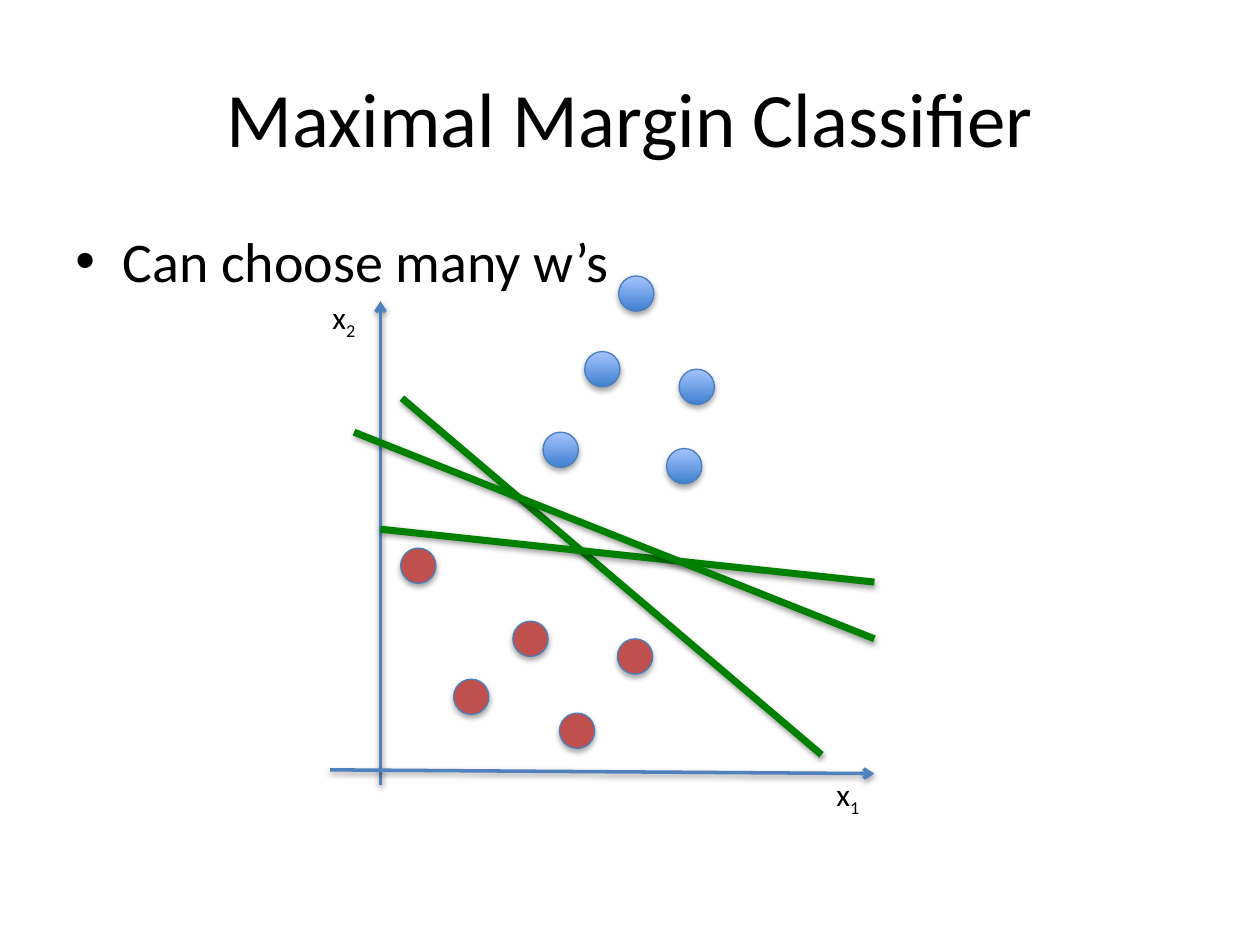
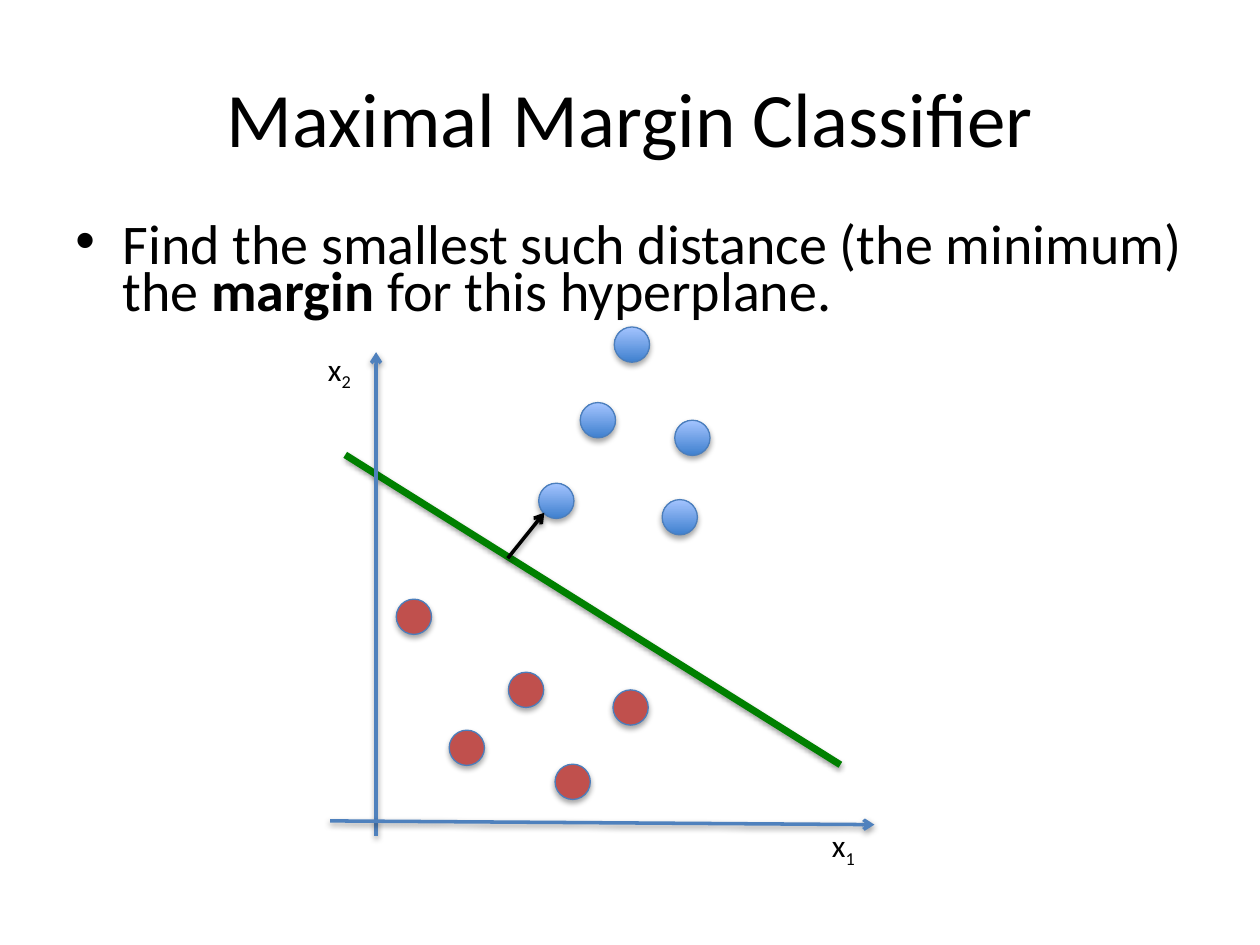
from lxml import etree
from pptx import Presentation
from pptx.dml.color import RGBColor
from pptx.enum.shapes import MSO_CONNECTOR, MSO_SHAPE
from pptx.enum.text import MSO_ANCHOR, MSO_AUTO_SIZE, PP_ALIGN
from pptx.oxml.ns import qn
from pptx.util import Inches, Pt

STRAIGHT = MSO_CONNECTOR.STRAIGHT
OVAL = MSO_SHAPE.OVAL
MIDDLE = MSO_ANCHOR.MIDDLE
TOP = MSO_ANCHOR.TOP
GROW = MSO_AUTO_SIZE.SHAPE_TO_FIT_TEXT
CENTER = PP_ALIGN.CENTER
LEFT = PP_ALIGN.LEFT

COLUMNS, ROWS = 100, 75
FONT = "Calibri"
TITLE = "Maximal Margin Classifier"
COLORS = {
    "text": "000000",
    "axis": "4F81BD",
    "boundary": "008000",
    "dot outline": "4B7EBC",
    "blue dark": "3F80CE",
    "blue light": "A4C4FF",
    "red": "C0504D",
}

# Dot centres in columns and rows from the top of the vertical axis
BLUE_DOTS = [(17.6, 5.4), (20.3, -0.6), (25.1, 6.8), (24.1, 13.1), (14.3, 11.8)]
RED_DOTS = [(3, 21), (11.9, 26.8), (7.2, 31.4), (15.6, 34.1), (20.2, 28.2)]
DOT_SIZE = 2.8
AXIS_HEIGHT = 38.4


def color(name):
    return RGBColor.from_string(COLORS[name])


def add_child(parent, tag, **attributes):
    return etree.SubElement(parent, qn(tag), {key: str(value) for key, value in attributes.items()})


class Deck:
    """Holds the presentation, its style and the slide being filled."""

    def __init__(self):
        self.presentation = Presentation()
        self.presentation.slide_width = Inches(10)
        self.presentation.slide_height = Inches(7.5)
        self.slide = None

    def x(self, columns):
        return round(self.presentation.slide_width * columns / COLUMNS)

    def y(self, rows):
        return round(self.presentation.slide_height * rows / ROWS)

    def box(self, left, top, width, height):
        return self.x(left), self.y(top), self.x(width), self.y(height)

    def new_slide(self):
        self.slide = self.presentation.slides.add_slide(self.presentation.slide_layouts[6])
        self.text((5, 3, 90, 12.5), [TITLE], 44, CENTER, MIDDLE)

    def text(self, box, pieces, size, alignment=LEFT, anchor=TOP):
        shape = self.slide.shapes.add_textbox(*self.box(*box))
        frame = shape.text_frame
        frame.word_wrap = True
        frame.vertical_anchor = anchor
        paragraph = frame.paragraphs[0]
        paragraph.alignment = alignment
        for piece in pieces:
            run = paragraph.add_run()
            run.text = piece
            run.font.name = FONT
            run.font.size = Pt(size)
            run.font.color.rgb = color("text")
        return frame

    def bullet(self, pieces, line_spacing=1.0):
        paragraph = self.text((5, 17.5, 90, 49.5), pieces, 32).paragraphs[0]
        paragraph.line_spacing = line_spacing
        paragraph.space_before = Pt(6.4)
        properties = paragraph._p.get_or_add_pPr()
        properties.set("marL", str(self.x(3.75)))
        properties.set("indent", str(self.x(-3.75)))
        add_child(properties, "a:buFont", typeface="Arial")
        add_child(properties, "a:buChar", char="•")
        return paragraph

    def axis_label(self, left, top, index):
        frame = self.text((left, top, 4, 4), ["x", index], 18)
        frame.word_wrap = False
        frame.auto_size = GROW
        frame.paragraphs[0].runs[1].font._element.set("baseline", "-25000")

    def shadow(self, shape, distance, opacity):
        effects = add_child(shape._element.spPr, "a:effectLst")
        outer = add_child(effects, "a:outerShdw", blurRad=40000, dist=distance,
                          dir=5400000, rotWithShape=0)
        black = add_child(outer, "a:srgbClr", val="000000")
        add_child(black, "a:alpha", val=opacity * 1000)

    def line(self, start, end, color_name, width=2, arrow=False):
        connector = self.slide.shapes.add_connector(
            STRAIGHT, self.x(start[0]), self.y(start[1]), self.x(end[0]), self.y(end[1]))
        connector.line.color.rgb = color(color_name)
        connector.line.width = Pt(width)
        if arrow:
            add_child(connector.line._get_or_add_ln(), "a:tailEnd", type="arrow")
        self.shadow(connector, 20000, 38)

    def boundary(self, start, end):
        self.line(start, end, "boundary", 4)

    def dot(self, center_x, center_y, is_blue):
        shape = self.slide.shapes.add_shape(OVAL, *self.box(
            center_x - DOT_SIZE / 2, center_y - DOT_SIZE / 2, DOT_SIZE, DOT_SIZE))
        if is_blue:
            shape.fill.gradient()
            shape.fill.gradient_angle = 90
            for stop, name in zip(shape.fill.gradient_stops, ("blue dark", "blue light")):
                stop.color.rgb = color(name)
        else:
            shape.fill.solid()
            shape.fill.fore_color.rgb = color("red")
        shape.line.color.rgb = color("dot outline")
        shape.line.width = Pt(0.75)
        self.shadow(shape, 23000, 35)

    def scatter(self, left, top):
        """Draw axes, labels and both classes; left, top is the vertical axis tip."""
        self.line((left, top + AXIS_HEIGHT), (left, top), "axis", arrow=True)
        self.axis_label(left + 35.2, top + 37.1, "1")
        self.axis_label(left - 4.8, top - 0.7, "2")
        for dots, is_blue in ((BLUE_DOTS, True), (RED_DOTS, False)):
            for across, down in dots:
                self.dot(left + across, top + down, is_blue)
        self.line((26.2, top + 37.2), (69.4, top + 37.5), "axis", arrow=True)


def many_boundaries(deck):
    deck.new_slide()
    deck.bullet(["Can choose many w’s"])
    deck.boundary((31.9, 31.6), (65.2, 59.9))
    deck.scatter(30.2, 23.9)
    deck.boundary((30.2, 42), (69.4, 46.2))
    deck.boundary((28.1, 34.3), (69.4, 50.7))


def smallest_distance(deck):
    deck.new_slide()
    paragraph = deck.bullet(["Find the smallest such distance (the minimum) the ",
                             "margin ", "for this hyperplane."], 0.7)
    paragraph.runs[1].font.bold = True
    deck.boundary((27.4, 36.1), (66.7, 60.7))
    deck.scatter(29.85, 27.95)
    deck.line((40.3, 44.3), (43.2, 40.7), "text", arrow=True)


def main():
    deck = Deck()
    many_boundaries(deck)
    smallest_distance(deck)
    deck.presentation.save("out.pptx")


if __name__ == "__main__":
    main()
